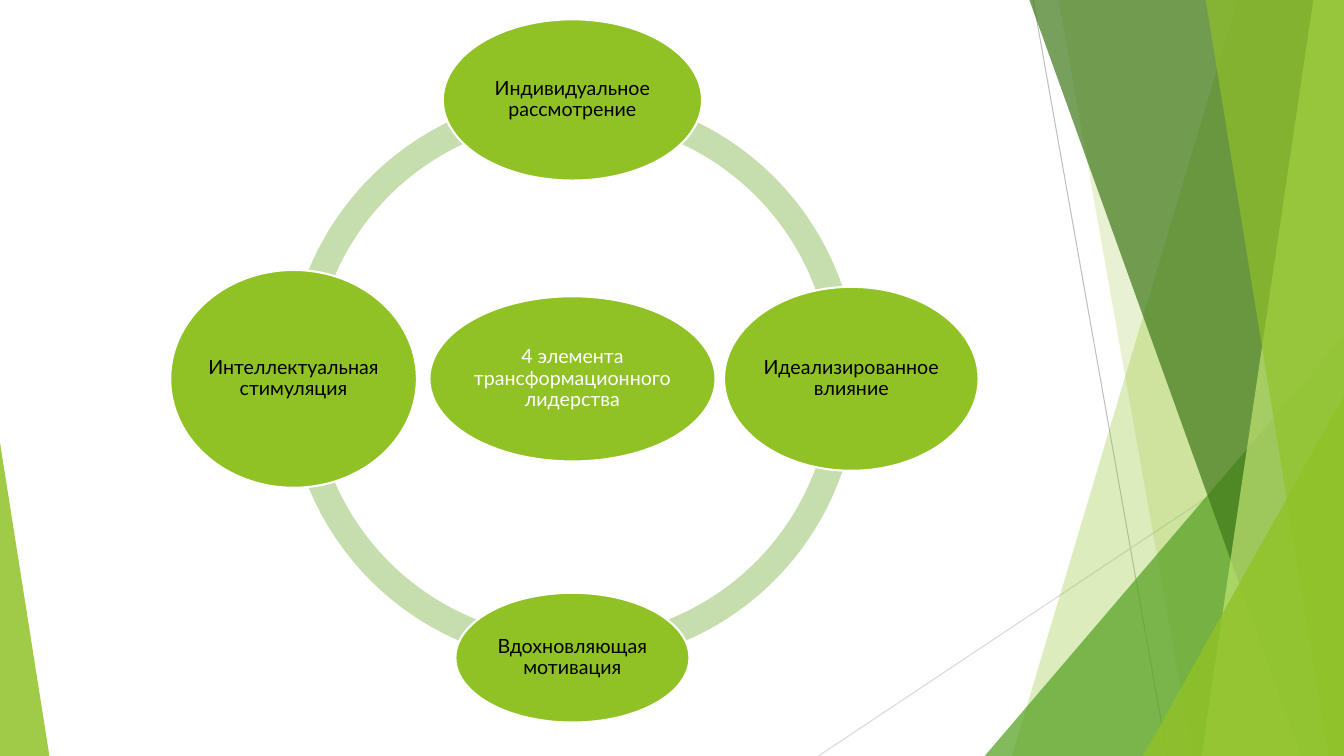
from dataclasses import dataclass

from lxml.etree import SubElement
from pptx import Presentation
from pptx.dml.color import RGBColor
from pptx.enum.shapes import MSO_CONNECTOR as Link, MSO_SHAPE as Form
from pptx.enum.text import MSO_ANCHOR as Anchor, PP_ALIGN as Align
from pptx.oxml.ns import qn
from pptx.util import Pt


@dataclass(frozen=True)
class Theme:
    lime: str = "90C226"
    pale_lime: str = "C0E474"
    green: str = "54A021"
    dark_green: str = "3F7819"
    ring: str = "C6DDAD"
    white: str = "FFFFFF"
    black: str = "000000"
    gray: str = "BFBFBF"
    light_gray: str = "D9D9D9"
    font: str = "Lato"
    size: float = 14
    outline: float = 1.5
    hairline: float = 0.75


WIDTH, HEIGHT = 960, 540
TOP = -0.6


class Canvas:
    """Draws on one page in the style of a theme; lengths are in points."""

    def __init__(self, page, theme):
        self.page, self.theme = page, theme

    def paint(self, shape, color, alpha=100, outline=None):
        shape.shadow.inherit = False
        shape.fill.solid()
        shape.fill.fore_color.rgb = RGBColor.from_string(color)
        if alpha < 100:
            tint = shape.fill._xPr.find(".//" + qn("a:srgbClr"))
            SubElement(tint, qn("a:alpha"), val=str(alpha * 1000))
        if outline:
            shape.line.color.rgb = RGBColor.from_string(outline)
            shape.line.width = Pt(self.theme.outline)
        else:
            shape.line.fill.background()
        return shape

    def line(self, start, end, color):
        link = self.page.shapes.add_connector(
            Link.STRAIGHT, *(Pt(value) for value in start + end))
        link.line.color.rgb = RGBColor.from_string(color)
        link.line.width = Pt(self.theme.hairline)
        SubElement(link._element.spPr, qn("a:effectLst"))

    def shape(self, form, frame, color, adjust=(), **look):
        box = self.page.shapes.add_shape(form, *(Pt(value) for value in frame))
        for index, value in enumerate(adjust):
            box.adjustments[index] = value
        return self.paint(box, color, **look)

    def shard(self, top_x, bottom_x, color, alpha):
        """Full-height facet between a slanted edge and the right page edge."""
        corners = [(top_x, TOP), (WIDTH, TOP), (WIDTH, HEIGHT), (bottom_x, HEIGHT)]
        points = [(Pt(x), Pt(y)) for x, y in corners]
        builder = self.page.shapes.build_freeform(*points[0])
        builder.add_line_segments(points[1:], close=True)
        self.paint(builder.convert_to_shape(), color, alpha)

    def wedge(self, left, top, width, apex, color, alpha):
        """Triangle standing on the bottom page edge."""
        self.shape(Form.ISOSCELES_TRIANGLE, (left, top, width, HEIGHT - top),
                   color, [apex], alpha=alpha)

    def oval(self, center, size, text, color):
        (x, y), (width, height) = center, size
        frame = (x - width / 2, y - height / 2, width, height)
        box = self.shape(Form.OVAL, frame, self.theme.lime, outline=self.theme.white)
        body = box.text_frame
        para = body.paragraphs[0]
        span = para.add_run()
        span.text = text
        margins = {f"margin_{side}": Pt(1.4) for side in ("left", "top", "right", "bottom")}
        formats = [
            (body, {"word_wrap": True, "vertical_anchor": Anchor.MIDDLE, **margins}),
            (para, {"alignment": Align.CENTER, "line_spacing": 0.9,
                    "space_after": Pt(0.35 * self.theme.size)}),
            (span.font, {"name": self.theme.font, "size": Pt(self.theme.size)}),
        ]
        for target, values in formats:
            for name, value in values.items():
                setattr(target, name, value)
        span.font.color.rgb = RGBColor.from_string(color)


def draw_backdrop(canvas):
    theme = canvas.theme
    canvas.line((738, 0), (833.8, HEIGHT), theme.gray)
    canvas.line((WIDTH, 290.2), (584.6, HEIGHT), theme.light_gray)
    canvas.shard(884.2, 722.9, theme.lime, 30)
    canvas.shard(756, 851.8, theme.lime, 20)
    canvas.wedge(703.4, 239.8, 256.6, 1, theme.green, 72)
    canvas.shard(735.1, 929.5, theme.dark_green, 70)
    canvas.shard(938.2, 858.2, theme.pale_lime, 70)
    canvas.shard(861.1, 949, theme.lime, 65)
    canvas.wedge(816.5, 283, 143.5, 1, theme.lime, 80)
    canvas.wedge(0, 316.1, 35.3, 0, theme.lime, 85)


def draw_cycle(canvas):
    theme = canvas.theme
    x, y = 408.9, 270.6
    orbit, ring = 199.2, 407.6

    # Ring of four quarter arcs; a quarter turn is 54 adjustment units
    for quarter in (2, 1, 0, 3):
        canvas.shape(Form.BLOCK_ARC, (x - ring / 2, y - ring / 2, ring, ring), theme.ring,
                     [54 * quarter, 54 * ((quarter + 1) % 4), 0.046])

    # Centre and the four elements around it, clockwise from the top
    canvas.oval((x, y), (204.4, 118), "4 элемента трансформационного лидерства", theme.white)
    elements = [
        (0, -1, (185.2, 115.2), "Индивидуальное рассмотрение"),
        (1, 0, (181.8, 131.4), "Идеализированное влияние"),
        (0, 1, (167.2, 92.7), "Вдохновляющая мотивация"),
        (-1, 0, (176.2, 155.6), "Интеллектуальная стимуляция"),
    ]
    for across, down, size, text in elements:
        center = (x + across * orbit, y + down * orbit)
        canvas.oval(center, size, text, theme.black)


def main():
    deck = Presentation()
    deck.slide_width, deck.slide_height = Pt(WIDTH), Pt(HEIGHT)
    page = deck.slides.add_slide(deck.slide_layouts[6])
    canvas = Canvas(page, Theme())
    draw_backdrop(canvas)
    draw_cycle(canvas)
    deck.save("out.pptx")


if __name__ == "__main__":
    main()
